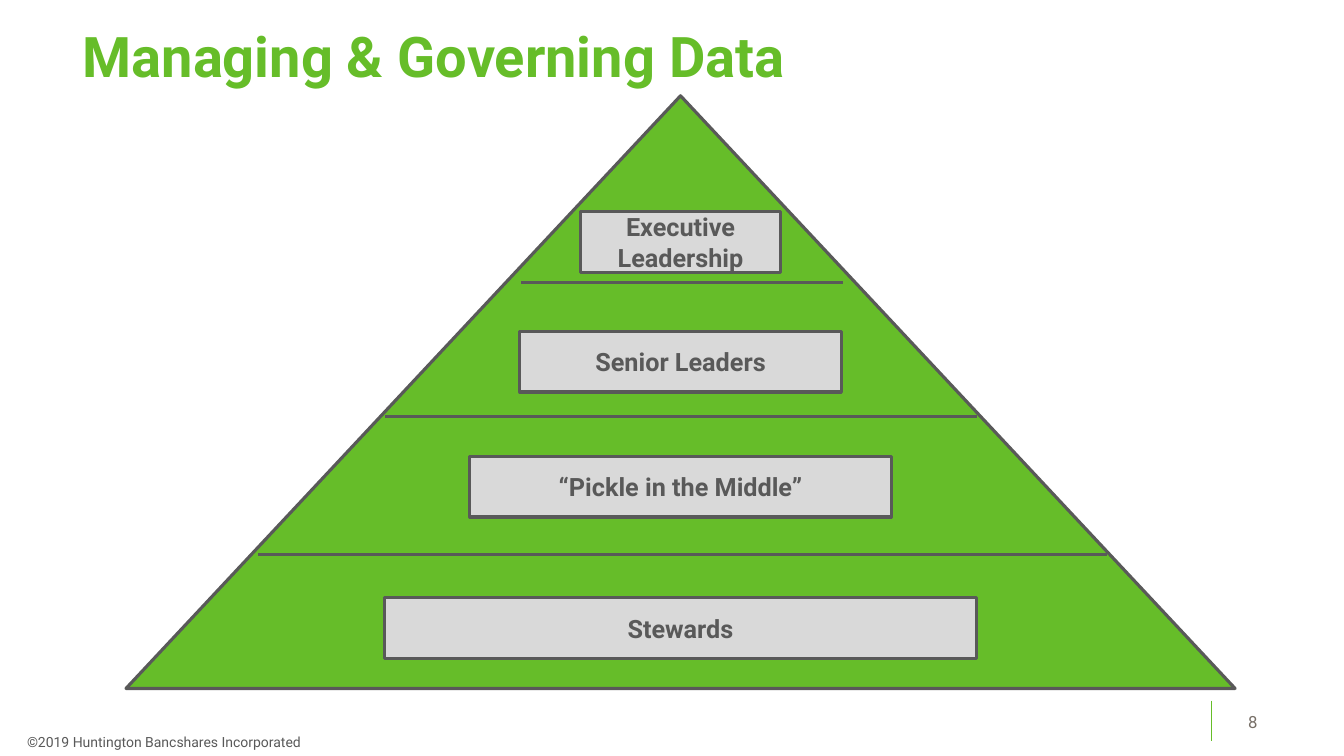
import pptx
import pptx.dml.color
import pptx.enum.shapes
import pptx.enum.text
import pptx.oxml.ns
import pptx.util
from lxml import etree
from pptx.util import Inches

FONT = "Roboto"
GREEN, GREY, LIGHT, TAUPE = "66BD29", "595959", "D9D9D9", "776F67"
CENTER = 6.75
SHAPES = pptx.enum.shapes.MSO_SHAPE

# label, box width, box top
LEVELS = [
    ("Executive Leadership", 1.98, 2.1),
    ("Senior Leaders", 3.19, 3.29),
    ("“Pickle in the Middle”", 4.18, 4.53),
    ("Stewards", 5.87, 5.93),
]
# left, right, height on the page
DIVIDERS = [(2.56, 10.98, 5.5), (3.82, 9.69, 4.13), (5.17, 8.36, 2.8)]


def color(value):
    return pptx.dml.color.RGBColor.from_string(value)


def write(frame, text, size, ink, bold=False):
    """Put one formatted paragraph in a text frame and return it."""
    para = frame.paragraphs[0]
    para.text = text
    para.font.name = FONT
    para.font.size = pptx.util.Pt(size)
    para.font.bold = bold
    para.font.color.rgb = color(ink)
    return para


def add_title(page, text):
    title = page.shapes.title
    title.left, title.top = Inches(0.72), Inches(0.24)
    title.width, title.height = Inches(9.03), Inches(0.53)
    frame = title.text_frame
    frame.auto_size = pptx.enum.text.MSO_AUTO_SIZE.NONE
    frame.vertical_anchor = pptx.enum.text.MSO_ANCHOR.TOP
    para = write(frame, text, 40, GREEN, bold=True)
    para.alignment = pptx.enum.text.PP_ALIGN.LEFT
    para.line_spacing = 0.9


def add_centered_shape(page, kind, top, width, height, fill):
    shape = page.shapes.add_shape(
        kind, Inches(CENTER - width / 2), Inches(top), Inches(width), Inches(height))
    shape.shadow.inherit = False
    shape.fill.solid()
    shape.fill.fore_color.rgb = color(fill)
    shape.line.color.rgb = color(GREY)
    shape.line.width = pptx.util.Pt(2.25)
    return shape


def add_level(page, label, width, top):
    box = add_centered_shape(page, SHAPES.RECTANGLE, top, width, 0.6, LIGHT)
    frame = box.text_frame
    frame.word_wrap = True
    frame.vertical_anchor = pptx.enum.text.MSO_ANCHOR.MIDDLE
    para = write(frame, label, 18, GREY, bold=True)
    para.alignment = pptx.enum.text.PP_ALIGN.CENTER


def add_line(page, start, end, ink, weight):
    line = page.shapes.add_connector(
        pptx.enum.shapes.MSO_CONNECTOR.STRAIGHT, *map(Inches, start + end))
    line.line.color.rgb = color(ink)
    line.line.width = pptx.util.Pt(weight)
    etree.SubElement(line._element.spPr, pptx.oxml.ns.qn("a:effectLst"))


def add_text(page, place, text, size, ink, wrap=True):
    box = page.shapes.add_textbox(*map(Inches, place))
    box.text_frame.word_wrap = wrap
    write(box.text_frame, text, size, ink)


def main():
    deck = pptx.Presentation()
    deck.slide_width, deck.slide_height = Inches(13.33), Inches(7.5)
    page = deck.slides.add_slide(deck.slide_layouts.get_by_name("Title Only"))

    add_title(page, "Managing & Governing Data")
    add_line(page, (12.02, 6.95), (12.02, 7.35), GREEN, 0.75)
    add_centered_shape(page, SHAPES.ISOSCELES_TRIANGLE, 0.95, 11, 5.88, GREEN)
    for left, right, height in DIVIDERS:
        add_line(page, (left, height), (right, height), GREY, 2)
    for label, width, top in LEVELS:
        add_level(page, label, width, top)
    add_text(page, (12.28, 7.01, 0.63, 0.4), "8", 12, TAUPE)
    add_text(page, (0.17, 7.23, 2.96, 0.27),
             "©2019 Huntington Bancshares Incorporated", 10, GREY, wrap=False)

    deck.save("out.pptx")


if __name__ == "__main__":
    main()
